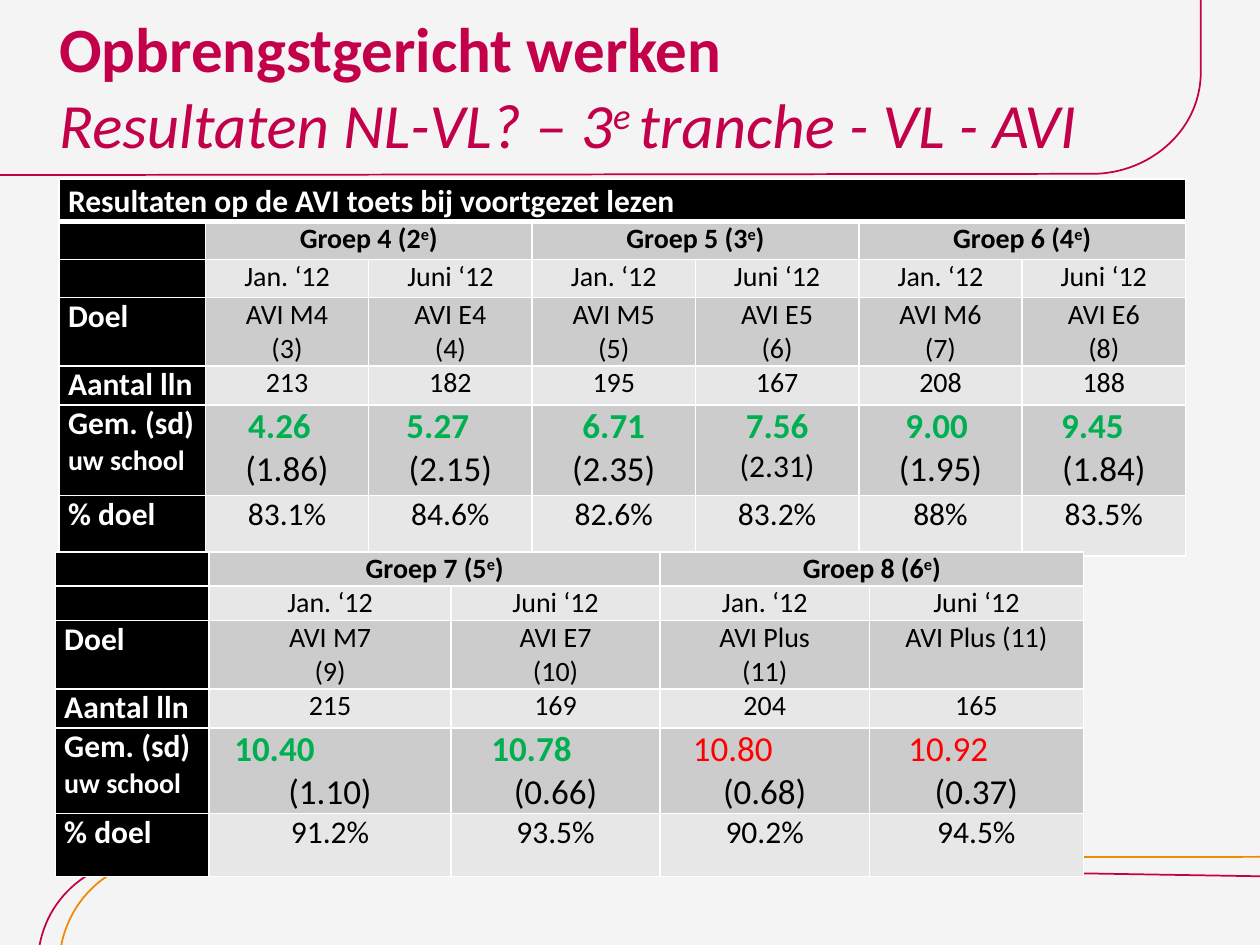
import dataclasses
import typing

import pptx
import pptx.dml.color
import pptx.enum.text
import pptx.oxml
import pptx.oxml.ns
import pptx.util

Inches = pptx.util.Inches
Pt = pptx.util.Pt
RGB = pptx.dml.color.RGBColor
Align = pptx.enum.text.PP_ALIGN

FONT = "Calibri"
PAPER = RGB(0xF4, 0xF4, 0xF4)
CRIMSON = RGB(0xC3, 0x00, 0x4A)
ORANGE = RGB(0xF0, 0x88, 0x00)
BLACK = RGB(0, 0, 0)
WHITE = RGB(0xFF, 0xFF, 0xFF)
DARK = RGB(0xCC, 0xCC, 0xCC)
LIGHT = RGB(0xE7, 0xE7, 0xE7)
GREEN = RGB(0x00, 0xB0, 0x50)
RED = RGB(0xFF, 0, 0)

LABELS = ["", "", "Doel", "Aantal lln", "Gem. (sd)\nuw school", "% doel"]
TERMS = ["Jan. ‘12", "Juni ‘12"]
Point = tuple[float, float]


@dataclasses.dataclass
class Score:
    mean: str
    dev: str
    indent: float = 0  # zero keeps the mean centred
    color: RGB = GREEN
    size: int = 20


@dataclasses.dataclass
class Grid:
    left: float
    top: float
    cols: list[float]
    rows: list[float]
    groups: list[str]
    goals: list[str]
    counts: list[str]
    scores: list[Score]
    shares: list[str]
    title: str = ""


@dataclasses.dataclass
class Curve:
    """Straight start, Bezier segments of three points each, straight end."""
    start: Point
    bend: list[Point]
    end: Point
    color: RGB


CURVES = [
    Curve((0.27, 8.89), [(0.3, 7.66), (0.3, 7.43), (0.39, 7.21), (0.56, 7.05),
                         (0.72, 6.9), (0.94, 6.81), (1.17, 6.81)], (10.3, 6.96), CRIMSON),
    Curve((0.47, 8.91), [(0.47, 7.67), (0.47, 7.44), (0.56, 7.22), (0.72, 7.06),
                         (0.88, 6.9), (1.1, 6.81), (1.33, 6.81)], (10.46, 6.8), ORANGE),
    Curve((9.53, -0.58), [(9.53, 0.57), (9.53, 0.79), (9.44, 0.99), (9.28, 1.14),
                          (9.12, 1.29), (8.9, 1.38), (8.67, 1.38)], (-0.46, 1.39), CRIMSON),
]

GRIDS = [
    Grid(0.47, 1.42, [1.16] + [7.78 / 6] * 6, [0.34, 0.3, 0.3, 0.54, 0.31, 0.72, 0.48],
         ["Groep 4 (2^e^)", "Groep 5 (3^e^)", "Groep 6 (4^e^)"],
         ["AVI M4\n(3)", "AVI E4\n(4)", "AVI M5\n(5)", "AVI E5\n(6)", "AVI M6\n(7)", "AVI E6\n(8)"],
         ["213", "182", "195", "167", "208", "188"],
         [Score("4.26", "(1.86)", 0.27), Score("5.27", "(2.15)", 0.23),
          Score("6.71", "(2.35)"), Score("7.56", "(2.31)", size=18),
          Score("9.00", "(1.95)", 0.3), Score("9.45", "(1.84)", 0.24)],
         ["83.1%", "84.6%", "82.6%", "83.2%", "88%", "83.5%"],
         "Resultaten op de AVI toets bij voortgezet lezen"),
    Grid(0.44, 4.38, [1.22, 1.92, 1.66, 1.66, 1.7], [0.27, 0.27, 0.54, 0.31, 0.68, 0.5],
         ["Groep 7 (5^e^)", "Groep 8 (6^e^)"],
         ["AVI M7\n(9)", "AVI E7\n(10)", "AVI Plus\n(11)", "AVI Plus (11)"],
         ["215", "169", "204", "165"],
         [Score("10.40", "(1.10)", 0.13), Score("10.78", "(0.66)", 0.25),
          Score("10.80", "(0.68)", 0.19, RED), Score("10.92", "(0.37)", 0.24, RED)],
         ["91.2%", "93.5%", "90.2%", "94.5%"]),
]


def style(para: typing.Any, size: int, color: RGB, bold: bool = False, slant: bool = False) -> None:
    """Format a paragraph; text between carets becomes superscript."""
    parts = para.text.split("^")
    para.text = parts[0]
    for part in parts[1:]:
        para.add_run().text = part
    for i, run in enumerate(para.runs):
        font = run.font
        font.name, font.size, font.bold, font.italic = FONT, Pt(size), bold, slant
        font.color.rgb = color
        if i % 2:
            font._element.set("baseline", "30000")


def write(cell: typing.Any, text: str, size: int, color: RGB = BLACK,
          bold: bool = False, align: Align = Align.CENTER) -> None:
    cell.text_frame.text = text
    for para in cell.text_frame.paragraphs:
        para.alignment = align
        style(para, size, color, bold)


def dress(cell: typing.Any, fill: RGB, base: int = 1) -> None:
    """Give a cell its fill, margins and white borders."""
    cell.fill.solid()
    cell.fill.fore_color.rgb = fill
    cell.margin_left = cell.margin_right = Inches(0.07)
    cell.margin_top = cell.margin_bottom = 0
    props = cell._tc.get_or_add_tcPr()
    for i, side in enumerate(["lnL", "lnR", "lnT", "lnB"]):
        width = Pt(base if side == "lnB" else 1)
        props.insert(i, pptx.oxml.parse_xml(
            f'<a:{side} {pptx.oxml.ns.nsdecls("a")} w="{width}"><a:solidFill>'
            f'<a:srgbClr val="{WHITE}"/></a:solidFill></a:{side}>'))
    if not cell.text_frame.text:
        cell.text_frame.paragraphs[0]._p.get_or_add_endParaRPr().set("sz", "1000")


def mark(cell: typing.Any, score: Score) -> None:
    write(cell, f"{score.mean}\n{score.dev}", score.size)
    mean = cell.text_frame.paragraphs[0]
    style(mean, 20, score.color, score.color == GREEN)
    if score.indent:
        mean.alignment = Align.LEFT
        props = mean._p.get_or_add_pPr()
        props.set("marL", str(Inches(score.indent)))
        props.set("indent", "0")


def draw_grid(slide: typing.Any, grid: Grid) -> None:
    table = slide.shapes.add_table(
        len(grid.rows), len(grid.cols), Inches(grid.left), Inches(grid.top),
        Inches(sum(grid.cols)), Inches(sum(grid.rows))).table
    table.first_row = table.horz_banding = False
    for col, width in zip(table.columns, grid.cols):
        col.width = Inches(width)
    for row, height in zip(table.rows, grid.rows):
        row.height = Inches(height)

    top = 1 if grid.title else 0
    if grid.title:
        head = table.cell(0, 0)
        head.merge(table.cell(0, len(grid.cols) - 1))
        write(head, grid.title, 18, WHITE, True, Align.JUSTIFY)
        head.text_frame.paragraphs[0].line_spacing = 1.1
    for i, label in enumerate(LABELS):
        cell = table.cell(top + i, 0)
        write(cell, label, 18, WHITE, True, Align.LEFT)
        for para in cell.text_frame.paragraphs[1:]:
            style(para, 16, WHITE, True)
    for i, group in enumerate(grid.groups):
        cell = table.cell(top, 1 + 2 * i)
        cell.merge(table.cell(top, 2 + 2 * i))
        write(cell, group, 16, bold=True)
    bands = [(1, TERMS * len(grid.groups), 16), (2, grid.goals, 16),
             (3, grid.counts, 16), (5, grid.shares, 18)]
    for row, texts, size in bands:
        for col, text in enumerate(texts, 1):
            write(table.cell(top + row, col), text, size)
    for col, score in enumerate(grid.scores, 1):
        mark(table.cell(top + 4, col), score)

    for r in range(len(grid.rows)):
        for c in range(len(grid.cols)):
            band = LIGHT if (r - top) % 2 else DARK
            dress(table.cell(r, c), BLACK if r < top or c == 0 else band, 3 if r < top else 1)


def trace(bend: list[Point], steps: int = 16) -> list[Point]:
    """Points along joined cubic Bezier segments."""
    points = [bend[0]]
    for i in range(0, len(bend) - 1, 3):
        for n in range(1, steps + 1):
            t = n / steps
            weights = [(1 - t) ** 3, 3 * t * (1 - t) ** 2, 3 * t * t * (1 - t), t ** 3]
            x, y = (sum(w * p[k] for w, p in zip(weights, bend[i:i + 4])) for k in (0, 1))
            points.append((x, y))
    return points


def draw_curve(slide: typing.Any, curve: Curve) -> None:
    path = slide.shapes.build_freeform(*map(Inches, curve.start))
    points = trace(curve.bend) + [curve.end]
    path.add_line_segments([(Inches(x), Inches(y)) for x, y in points], close=False)
    shape = path.convert_to_shape()
    shape.shadow.inherit = False
    shape.fill.background()
    shape.line.color.rgb = curve.color
    shape.line.width = Pt(1)


def set_title(slide: typing.Any) -> None:
    title = slide.shapes.title
    title.left, title.top, title.width, title.height = map(Inches, (0.47, 0, 9.06, 1.35))
    frame = title.text_frame
    frame.margin_left = frame.margin_right = 0
    frame.vertical_anchor = pptx.enum.text.MSO_ANCHOR.MIDDLE
    frame.auto_size = pptx.enum.text.MSO_AUTO_SIZE.NONE
    frame.text = "Opbrengstgericht werken\nResultaten NL-VL? – 3^e ^tranche - VL - AVI"
    for i, para in enumerate(frame.paragraphs):
        para.alignment = Align.LEFT
        para.space_before = Pt(0)
        style(para, 36, CRIMSON, i == 0, i == 1)


def main() -> None:
    deck = pptx.Presentation()
    deck.slide_width, deck.slide_height = Inches(10), Inches(7.5)
    slide = deck.slides.add_slide(deck.slide_layouts[5])
    slide.background.fill.solid()
    slide.background.fill.fore_color.rgb = PAPER
    for curve in CURVES:
        draw_curve(slide, curve)
    set_title(slide)
    for grid in GRIDS:
        draw_grid(slide, grid)
    deck.save("out.pptx")


if __name__ == "__main__":
    main()
